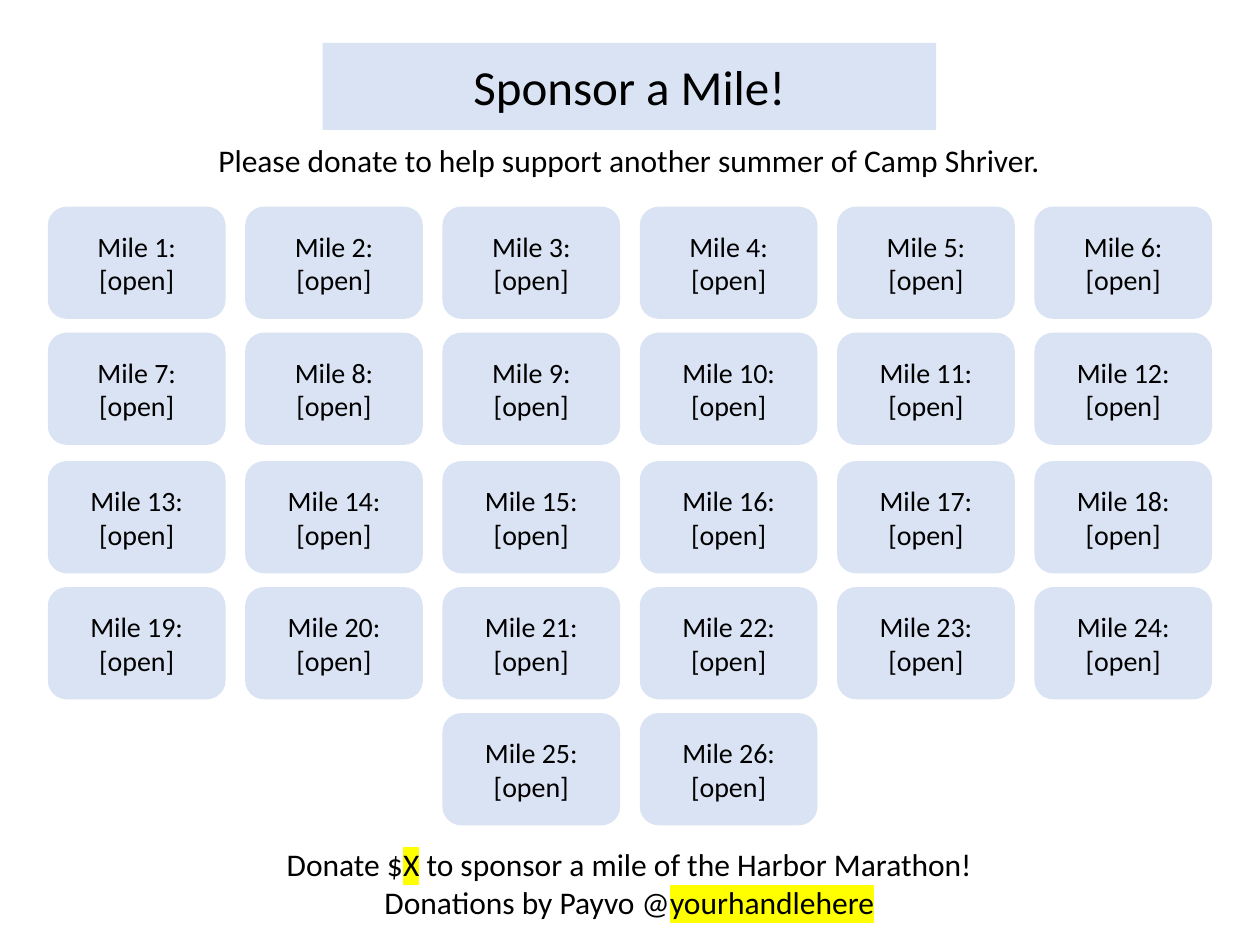
from lxml.etree import SubElement
from pptx import Presentation
from pptx.dml.color import RGBColor
from pptx.enum.shapes import MSO_SHAPE
from pptx.enum.text import MSO_ANCHOR, MSO_AUTO_SIZE, PP_ALIGN
from pptx.oxml.ns import qn
from pptx.util import Inches, Pt

COLORS = {"card": "DAE3F3", "text": "000000", "highlight": "FFFF00"}
FONT = "Calibri"

TITLE = [["Sponsor a Mile!"]]
APPEAL = [["Please donate to help support another summer of Camp Shriver."]]
DONATION = [
    ["Donate $", ("X", "highlight"), " to sponsor a mile of the Harbor Marathon!"],
    ["Donations by Payvo @", ("yourhandlehere", "highlight")],
]
STATUS = "[open]"
MILES = 26
COLUMNS = 6
ROW_TOPS = [1.64, 2.64, 3.66, 4.66, 5.66]
CARD_WIDTH, CARD_HEIGHT = 1.41, 0.89
GRID_LEFT, COLUMN_STEP = 0.38, 1.566


def write_text(shape, paragraphs, size, anchor=MSO_ANCHOR.MIDDLE):
    frame = shape.text_frame
    frame.word_wrap = True
    frame.auto_size = MSO_AUTO_SIZE.NONE
    frame.vertical_anchor = anchor
    for index, pieces in enumerate(paragraphs):
        para = frame.add_paragraph() if index else frame.paragraphs[0]
        para.alignment = PP_ALIGN.CENTER
        for piece in pieces:
            text, mark = (piece, None) if isinstance(piece, str) else piece
            span = para.add_run()
            span.text = text
            span.font.size = Pt(size)
            span.font.color.rgb = RGBColor.from_string(COLORS["text"])
            if mark:
                highlight = SubElement(span.font._element, qn("a:highlight"))
                SubElement(highlight, qn("a:srgbClr"), val=COLORS[mark])
            span.font.name = FONT


def fill_card(shape):
    shape.fill.solid()
    shape.fill.fore_color.rgb = RGBColor.from_string(COLORS["card"])
    shape.line.fill.background()


def add_title(page):
    title = page.shapes.title
    title.left, title.top = Inches(2.56), Inches(0.34)
    title.width, title.height = Inches(4.87), Inches(0.69)
    outline = SubElement(title._element.spPr, qn("a:prstGeom"), prst="roundRect")
    SubElement(outline, qn("a:avLst"))
    fill_card(title)
    write_text(title, TITLE, size=28)


def add_note(page, paragraphs, left, top, width, height):
    box = page.shapes.add_textbox(Inches(left), Inches(top), Inches(width), Inches(height))
    write_text(box, paragraphs, size=18, anchor=MSO_ANCHOR.TOP)


def add_mile(page, mile):
    row, column = divmod(mile - 1, COLUMNS)
    in_row = min(COLUMNS, MILES - row * COLUMNS)
    column += (COLUMNS - in_row) // 2
    card = page.shapes.add_shape(
        MSO_SHAPE.ROUNDED_RECTANGLE,
        Inches(GRID_LEFT + column * COLUMN_STEP),
        Inches(ROW_TOPS[row]),
        Inches(CARD_WIDTH),
        Inches(CARD_HEIGHT),
    )
    card.shadow.inherit = False
    fill_card(card)
    write_text(card, [[f"Mile {mile}:"], [STATUS]], size=16)


def main():
    deck = Presentation()
    deck.slide_width, deck.slide_height = Inches(10), Inches(7.5)
    page = deck.slides.add_slide(deck.slide_layouts.get_by_name("Title Only"))
    add_title(page)
    add_note(page, APPEAL, left=1.38, top=1.07, width=7.23, height=0.4)
    for mile in range(1, MILES + 1):
        add_mile(page, mile)
    add_note(page, DONATION, left=1.94, top=6.66, width=6.11, height=0.71)
    deck.save("out.pptx")


if __name__ == "__main__":
    main()
